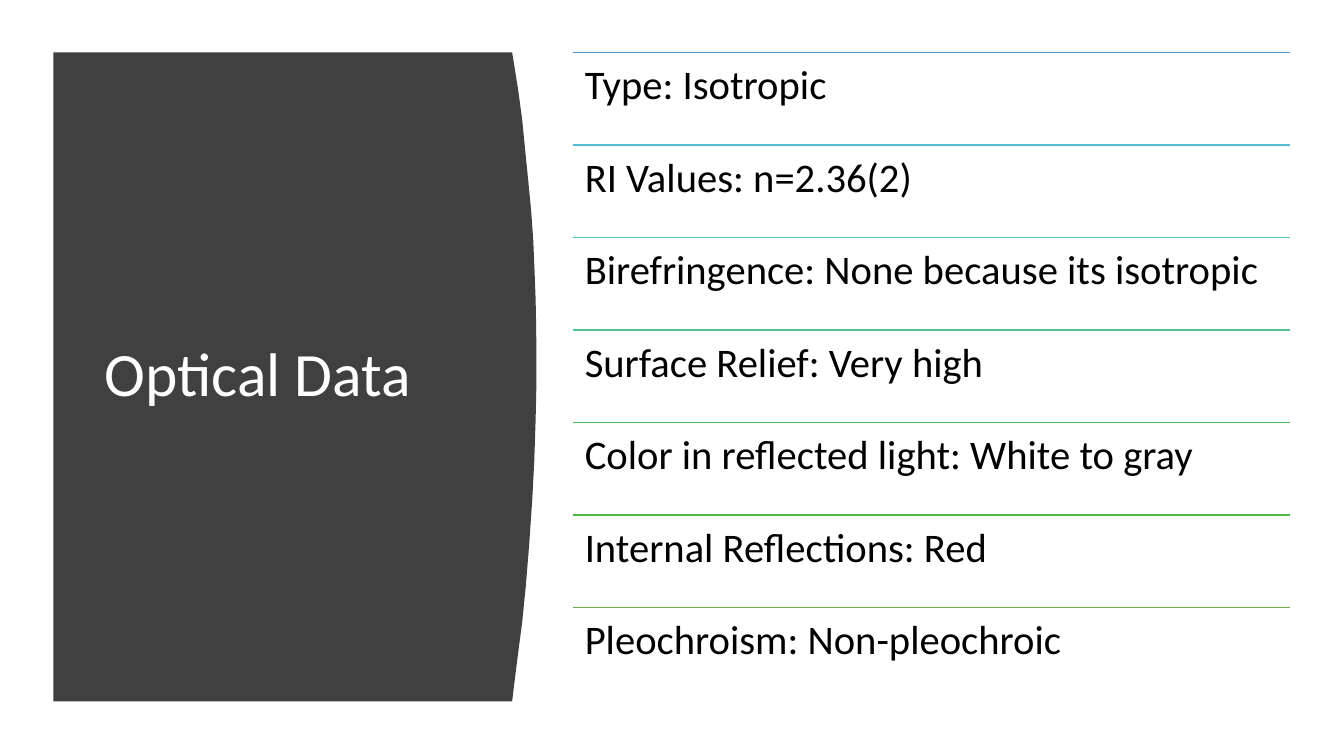
from lxml import etree
from pptx import Presentation
from pptx.dml.color import RGBColor
from pptx.enum.shapes import MSO_CONNECTOR
from pptx.enum.text import MSO_ANCHOR
from pptx.oxml.ns import qn
from pptx.util import Pt

STRAIGHT = MSO_CONNECTOR.STRAIGHT
TOP, MIDDLE = MSO_ANCHOR.TOP, MSO_ANCHOR.MIDDLE

TITLE = "Optical Data"
PROPERTIES = [
    ("Type: Isotropic", "5B9BD5"),
    ("RI Values: n=2.36(2)", "56BCD0"),
    ("Birefringence: None because its isotropic", "52CAB8"),
    ("Surface Relief: Very high", "4DC58D"),
    ("Color in reflected light: White to gray", "49BF64"),
    ("Internal Reflections: Red", "50B846"),
    ("Pleochroism: Non-pleochroic", "70AD47"),
]
PANEL_LEFT = 38.2
PANEL_CURVE = [
    (365.8, 37.4), (370.1, 64.1), (373, 85.7), (375.1, 107.3), (377.3, 128.9),
    (379.4, 150.5), (380.9, 171.4), (381.8, 193), (382.6, 213.8), (383, 234),
    (383.2, 264.2), (383, 283.7), (382.5, 302.4), (381.6, 329.8), (380.2, 356.4),
    (378, 388.8), (375.6, 418.3), (373, 444.2), (370.1, 466.6), (367.9, 483.8),
    (365.8, 501.1),
]
LIST_LEFT, LIST_TOP, LIST_WIDTH, ROW_HEIGHT = 409, 37.4, 512.6, 66.1


def color(value):
    return RGBColor.from_string(value)


def add_text(slide, text, left, top, width, height, *, size, fill, anchor, margins):
    shape = slide.shapes.add_textbox(Pt(left), Pt(top), Pt(width), Pt(height))
    frame = shape.text_frame
    frame.word_wrap = True
    frame.vertical_anchor = anchor
    horizontal, vertical = margins
    frame.margin_left = frame.margin_right = Pt(horizontal)
    frame.margin_top = frame.margin_bottom = Pt(vertical)
    paragraph = frame.paragraphs[0]
    paragraph.line_spacing = 0.9
    run = paragraph.add_run()
    run.text = text
    run.font.name = "Calibri"
    run.font.size = Pt(size)
    run.font.color.rgb = color(fill)


def add_panel(slide):
    top, bottom = PANEL_CURVE[0][1], PANEL_CURVE[-1][1]
    builder = slide.shapes.build_freeform(Pt(PANEL_LEFT), Pt(top))
    outline = PANEL_CURVE + [(PANEL_LEFT, bottom)]
    builder.add_line_segments([(Pt(x), Pt(y)) for x, y in outline], close=True)
    panel = builder.convert_to_shape()
    panel.shadow.inherit = False
    panel.fill.solid()
    panel.fill.fore_color.rgb = color("404040")
    panel.line.fill.background()


def add_rule(slide, top, stroke):
    rule = slide.shapes.add_connector(
        STRAIGHT, Pt(LIST_LEFT), Pt(top), Pt(LIST_LEFT + LIST_WIDTH), Pt(top))
    rule.line.color.rgb = color(stroke)
    rule.line.width = Pt(1)
    etree.SubElement(rule._element.spPr, qn("a:effectLst"))


def main():
    presentation = Presentation()
    presentation.slide_width, presentation.slide_height = Pt(960), Pt(540)
    slide = presentation.slides.add_slide(presentation.slide_layouts[6])
    add_panel(slide)
    add_text(slide, TITLE, 67.7, 80, 269.3, 377.3,
             size=44, fill="FFFFFF", anchor=MIDDLE, margins=(7.2, 3.6))
    for index, (text, stroke) in enumerate(PROPERTIES):
        top = LIST_TOP + index * ROW_HEIGHT
        add_rule(slide, top, stroke)
        add_text(slide, text, LIST_LEFT, top, LIST_WIDTH, ROW_HEIGHT,
                 size=29, fill="000000", anchor=TOP, margins=(8.7, 8.7))
    presentation.save("out.pptx")


if __name__ == "__main__":
    main()
